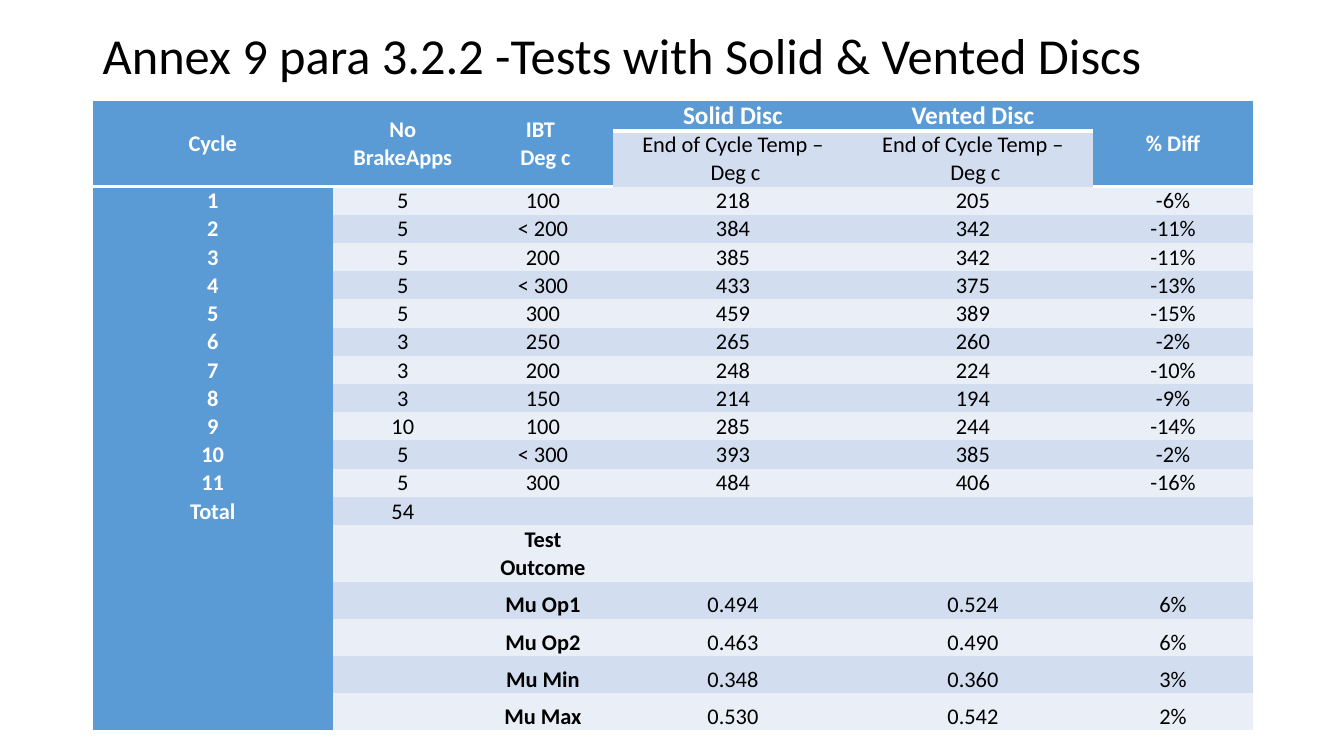
"""Build the slide comparing brake tests with solid and vented discs."""
from dataclasses import dataclass

from lxml import etree
from pptx import Presentation
from pptx.dml.color import RGBColor
from pptx.enum.text import MSO_ANCHOR, PP_ALIGN
from pptx.oxml.ns import qn
from pptx.slide import Slide
from pptx.table import Table, _Cell
from pptx.util import Inches, Pt

MIDDLE = MSO_ANCHOR.MIDDLE
BOTTOM = MSO_ANCHOR.BOTTOM
CENTER = PP_ALIGN.CENTER


@dataclass(frozen=True)
class Theme:
    font: str = "Calibri"
    title_size: int = 36
    disc_size: int = 18
    body_size: int = 16
    ink: str = "000000"
    paper: str = "FFFFFF"
    header: str = "5B9BD5"
    light_band: str = "EAEFF7"
    dark_band: str = "D2DEEF"
    thin_rule: int = 1
    thick_rule: int = 3


@dataclass(frozen=True)
class TestRow:
    height: float
    values: tuple[str, ...]


THEME = Theme()
NO_STYLE = "{2D5ABB26-0587-4C30-8999-92F81FD0307C}"
TITLE = "Annex 9 para 3.2.2 -Tests with Solid & Vented Discs"
COLUMN_WIDTHS = (2.38, 1.39, 1.39, 2.38, 2.38, 1.59)
DISC_COLUMNS = (3, 4)
OUTCOME_COLUMN = 2
HEADER_ROWS = 2
CYCLE_HEIGHT = 0.28
OUTCOME_HEIGHT = 0.37
END_TEMPERATURE = "End of Cycle Temp –\n Deg c"

HEADINGS = (
    TestRow(0.3, ("Cycle", "No BrakeApps", "IBT \n Deg c", "Solid Disc", "Vented Disc", "% Diff")),
    TestRow(0.55, ("", "", "", END_TEMPERATURE, END_TEMPERATURE, "")),
)
CYCLES = (
    ("5", "100", "218", "205", "-6%"),
    ("5", "< 200", "384", "342", "-11%"),
    ("5", "200", "385", "342", "-11%"),
    ("5", "< 300", "433", "375", "-13%"),
    ("5", "300", "459", "389", "-15%"),
    ("3", "250", "265", "260", "-2%"),
    ("3", "200", "248", "224", "-10%"),
    ("3", "150", "214", "194", "-9%"),
    ("10", "100", "285", "244", "-14%"),
    ("5", "< 300", "393", "385", "-2%"),
    ("5", "300", "484", "406", "-16%"),
)
OUTCOMES = (
    ("Mu Op1", "0.494", "0.524", "6%"),
    ("Mu Op2", "0.463", "0.490", "6%"),
    ("Mu Min", "0.348", "0.360", "3%"),
    ("Mu Max", "0.530", "0.542", "2%"),
)
ROWS = (
    *HEADINGS,
    *(TestRow(CYCLE_HEIGHT, (str(number), *cycle)) for number, cycle in enumerate(CYCLES, 1)),
    TestRow(CYCLE_HEIGHT, ("Total", "54", "", "", "", "")),
    TestRow(2 * CYCLE_HEIGHT, ("", "", "Test Outcome", "", "", "")),
    *(TestRow(OUTCOME_HEIGHT, ("", "", *outcome)) for outcome in OUTCOMES),
)
TOTAL_ROW = HEADER_ROWS + len(CYCLES)


def add_title(page: Slide) -> None:
    box = page.shapes.add_textbox(Inches(0.92), Inches(0.2), Inches(11.5), Inches(0.76))
    frame = box.text_frame
    frame.word_wrap = True
    frame.vertical_anchor = MIDDLE
    frame.text = TITLE
    para = frame.paragraphs[0]
    para.line_spacing = 0.9
    para.font.name = THEME.font
    para.font.size = Pt(THEME.title_size)
    para.font.color.rgb = RGBColor.from_string(THEME.ink)


def is_heading(row: int, column: int) -> bool:
    return column == 0 or row == 0 or (row < HEADER_ROWS and column not in DISC_COLUMNS)


def band_color(row: int) -> str:
    return THEME.dark_band if row % 2 else THEME.light_band


def rule_widths(row: int, column: int) -> dict[str, int]:
    """Return the white rules of a cell, by side, in schema order."""
    rules: dict[str, int] = {}
    if column == 0:
        rules["lnL"] = THEME.thin_rule
    if column == len(COLUMN_WIDTHS) - 1:
        rules["lnR"] = THEME.thin_rule
    if row == 0:
        rules["lnT"] = THEME.thin_rule
    if row < HEADER_ROWS and is_heading(row, column):
        rules["lnB"] = THEME.thick_rule
    if row == len(ROWS) - 1:
        rules["lnB"] = THEME.thin_rule
    return rules


def draw_rules(cell: _Cell, rules: dict[str, int]) -> None:
    properties = cell._tc.get_or_add_tcPr()
    for index, (side, width) in enumerate(rules.items()):
        line = etree.Element(qn(f"a:{side}"), w=str(Pt(width)))
        fill = etree.SubElement(line, qn("a:solidFill"))
        etree.SubElement(fill, qn("a:srgbClr"), val=THEME.paper)
        properties.insert(index, line)


def fill_cell(cell: _Cell, row: int, column: int, text: str) -> None:
    heading = is_heading(row, column)
    disc_name = row == 0 and column in DISC_COLUMNS
    outcome_name = row > TOTAL_ROW and column == OUTCOME_COLUMN
    cell.text = text
    cell.margin_left = cell.margin_right = Inches(0.07)
    cell.margin_top = cell.margin_bottom = Inches(0)
    cell.vertical_anchor = MIDDLE if row == 0 and not disc_name else BOTTOM
    cell.fill.solid()
    cell.fill.fore_color.rgb = RGBColor.from_string(THEME.header if heading else band_color(row))
    for para in cell.text_frame.paragraphs:
        para.alignment = CENTER
        para.line_spacing = 1.0 if disc_name else 1.02
        para.font.name = THEME.font
        para.font.size = Pt(THEME.disc_size if disc_name else THEME.body_size)
        para.font.bold = heading or outcome_name
        para.font.color.rgb = RGBColor.from_string(THEME.paper if heading else THEME.ink)
    draw_rules(cell, rule_widths(row, column))


def clear_style(table: Table) -> None:
    properties = table._tbl.tblPr
    properties.find(qn("a:tableStyleId")).text = NO_STYLE
    table.horz_banding = False


def add_results(page: Slide) -> None:
    height = sum(row.height for row in ROWS)
    table = page.shapes.add_table(
        len(ROWS), len(COLUMN_WIDTHS), Inches(0.92), Inches(1), Inches(11.5), Inches(height)
    ).table
    clear_style(table)
    for column, width in enumerate(COLUMN_WIDTHS):
        table.columns[column].width = Inches(width)
    for row, test in enumerate(ROWS):
        table.rows[row].height = Inches(test.height)
        for column, text in enumerate(test.values):
            fill_cell(table.cell(row, column), row, column, text)
    for column in range(len(COLUMN_WIDTHS)):
        if column not in DISC_COLUMNS:
            table.cell(0, column).merge(table.cell(HEADER_ROWS - 1, column))


def main() -> None:
    deck = Presentation()
    deck.slide_width = Inches(13.33)
    deck.slide_height = Inches(7.5)
    page = deck.slides.add_slide(deck.slide_layouts[6])
    add_title(page)
    add_results(page)
    deck.save("out.pptx")


if __name__ == "__main__":
    main()
